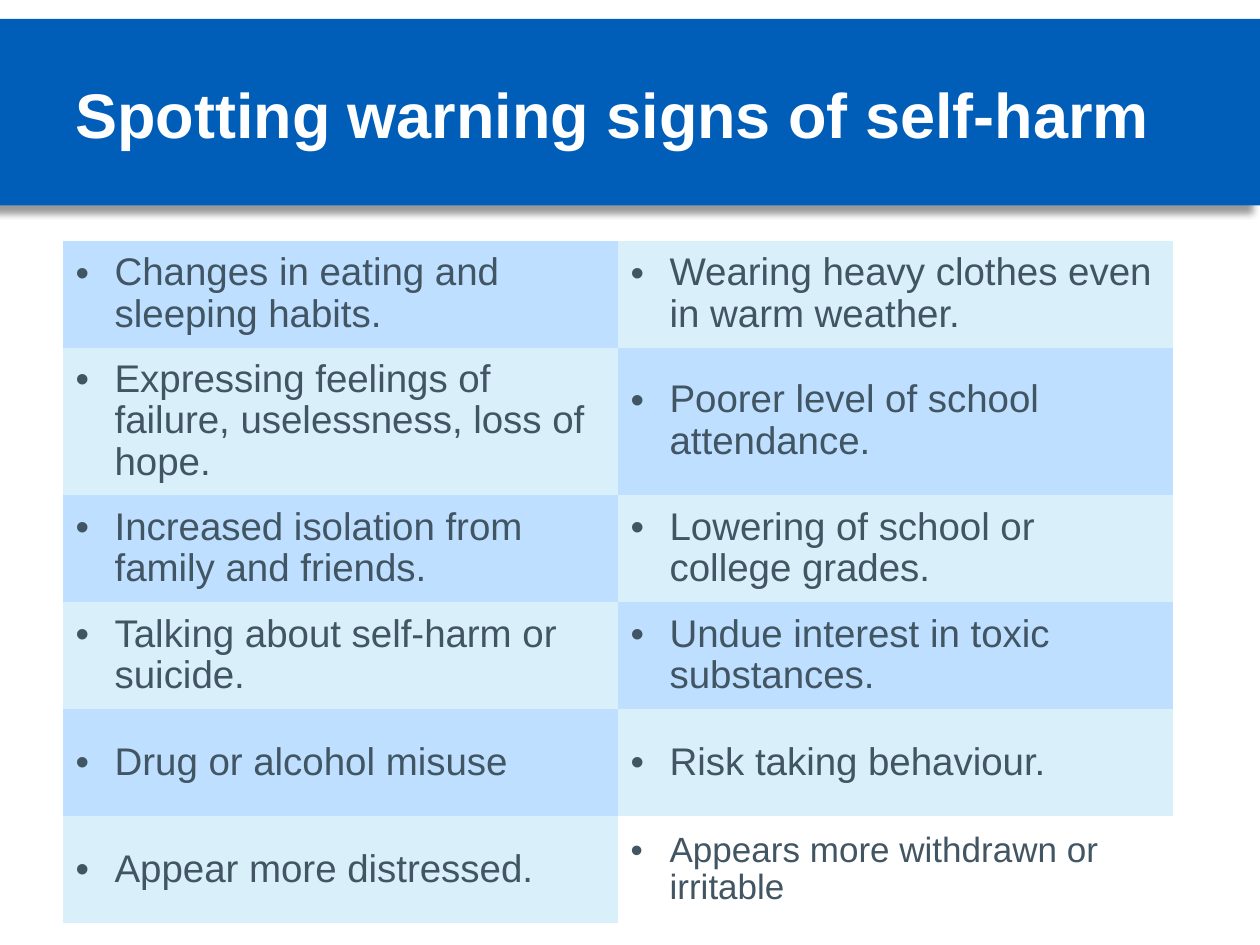
from lxml import etree
from pptx import Presentation
from pptx import util as u
from pptx.dml.color import RGBColor
from pptx.enum import shapes, text
from pptx.oxml import parse_xml
from pptx.oxml.ns import nsdecls, qn

FONT = "Arial"
COLORS = {
    "banner": "005EB8",
    "title": "FFFFFF",
    "body": "425563",
    "blue": "BEDFFF",
    "pale": "D9F0FA",
}
NO_GRID_STYLE = "{2D5ABB26-0587-4C30-8999-92F81FD0307C}"

TITLE = "Spotting warning signs of self-harm"
SIGNS = [
    ("Changes in eating and sleeping habits.",
     "Wearing heavy clothes even in warm weather."),
    ("Expressing feelings of failure, uselessness, loss of hope.",
     "Poorer level of school attendance."),
    ("Increased isolation from family and friends.",
     "Lowering of school or college grades."),
    ("Talking about self-harm or suicide.",
     "Undue interest in toxic substances."),
    ("Drug or alcohol misuse", "Risk taking behaviour."),
    ("Appear more distressed.", "Appears more withdrawn or irritable"),
]


def color(name):
    return RGBColor.from_string(COLORS[name])


def format_runs(paragraph, size, color_name, bold=False):
    for run in paragraph.runs:
        run.font.name = FONT
        run.font.size = u.Pt(size)
        run.font.bold = bold
        run.font.color.rgb = color(color_name)


def add_banner(slide):
    banner = slide.shapes.add_shape(
        shapes.MSO_SHAPE.RECTANGLE,
        u.Inches(0), u.Inches(0.15), u.Inches(10), u.Inches(1.48))
    banner.fill.solid()
    banner.fill.fore_color.rgb = color("banner")
    banner.line.fill.background()
    # Soft shadow falling down and to the left
    banner._element.spPr.append(parse_xml(
        f'<a:effectLst {nsdecls("a")}>'
        f'<a:outerShdw blurRad="{u.Pt(4)}" dist="{u.Pt(6)}" dir="8100000" '
        'algn="tr" rotWithShape="0"><a:srgbClr val="000000">'
        '<a:alpha val="40000"/></a:srgbClr></a:outerShdw></a:effectLst>'))


def add_title(slide):
    title = slide.shapes.add_textbox(
        u.Inches(0.5), u.Inches(0.27), u.Inches(9), u.Inches(1.25))
    frame = title.text_frame
    frame.word_wrap = True
    frame.vertical_anchor = text.MSO_ANCHOR.MIDDLE
    frame.text = TITLE
    format_runs(frame.paragraphs[0], 36, "title", bold=True)


def add_bullet(paragraph):
    properties = paragraph._p.get_or_add_pPr()
    properties.set("marL", str(u.Inches(0.31)))
    properties.set("indent", str(-u.Inches(0.31)))
    font = etree.SubElement(properties, qn("a:buFont"))
    font.set("typeface", FONT)
    bullet = etree.SubElement(properties, qn("a:buChar"))
    bullet.set("char", "•")


def fill_cell(cell, sign, size, fill):
    cell.text_frame.text = sign
    cell.vertical_anchor = text.MSO_ANCHOR.MIDDLE
    paragraph = cell.text_frame.paragraphs[0]
    paragraph.line_spacing = 0.97
    add_bullet(paragraph)
    format_runs(paragraph, size, "body")
    if fill:
        cell.fill.solid()
        cell.fill.fore_color.rgb = color(fill)
    else:
        cell.fill.background()


def add_signs_table(slide):
    rows, columns = len(SIGNS), len(SIGNS[0])
    table = slide.shapes.add_table(
        rows, columns, u.Inches(0.5), u.Inches(1.91),
        u.Inches(8.81), u.Inches(0.85 * rows)).table
    table.first_row = table.horz_banding = False
    table._tbl.tblPr.find(qn("a:tableStyleId")).text = NO_GRID_STYLE

    # Checkerboard fills; the last cell is smaller and unfilled
    for i, row in enumerate(SIGNS):
        for j, sign in enumerate(row):
            is_last = (i, j) == (rows - 1, columns - 1)
            fill = None if is_last else ("blue", "pale")[(i + j) % 2]
            fill_cell(table.cell(i, j), sign, 20 if is_last else 22, fill)


def main():
    presentation = Presentation()
    presentation.slide_width = u.Inches(10)
    presentation.slide_height = u.Inches(7.5)
    slide = presentation.slides.add_slide(presentation.slide_layouts[6])
    add_banner(slide)
    add_title(slide)
    add_signs_table(slide)
    presentation.save("out.pptx")


if __name__ == "__main__":
    main()
